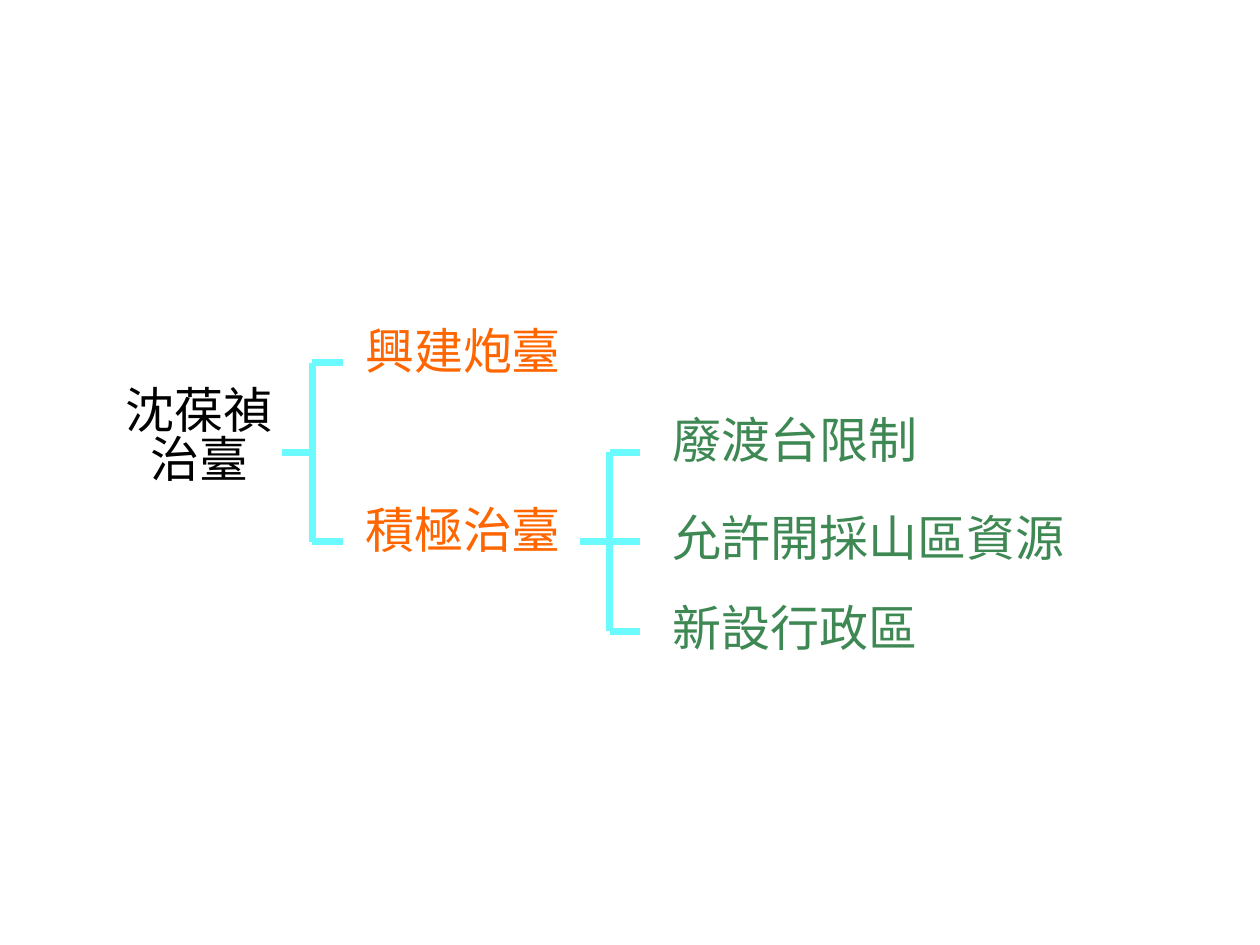
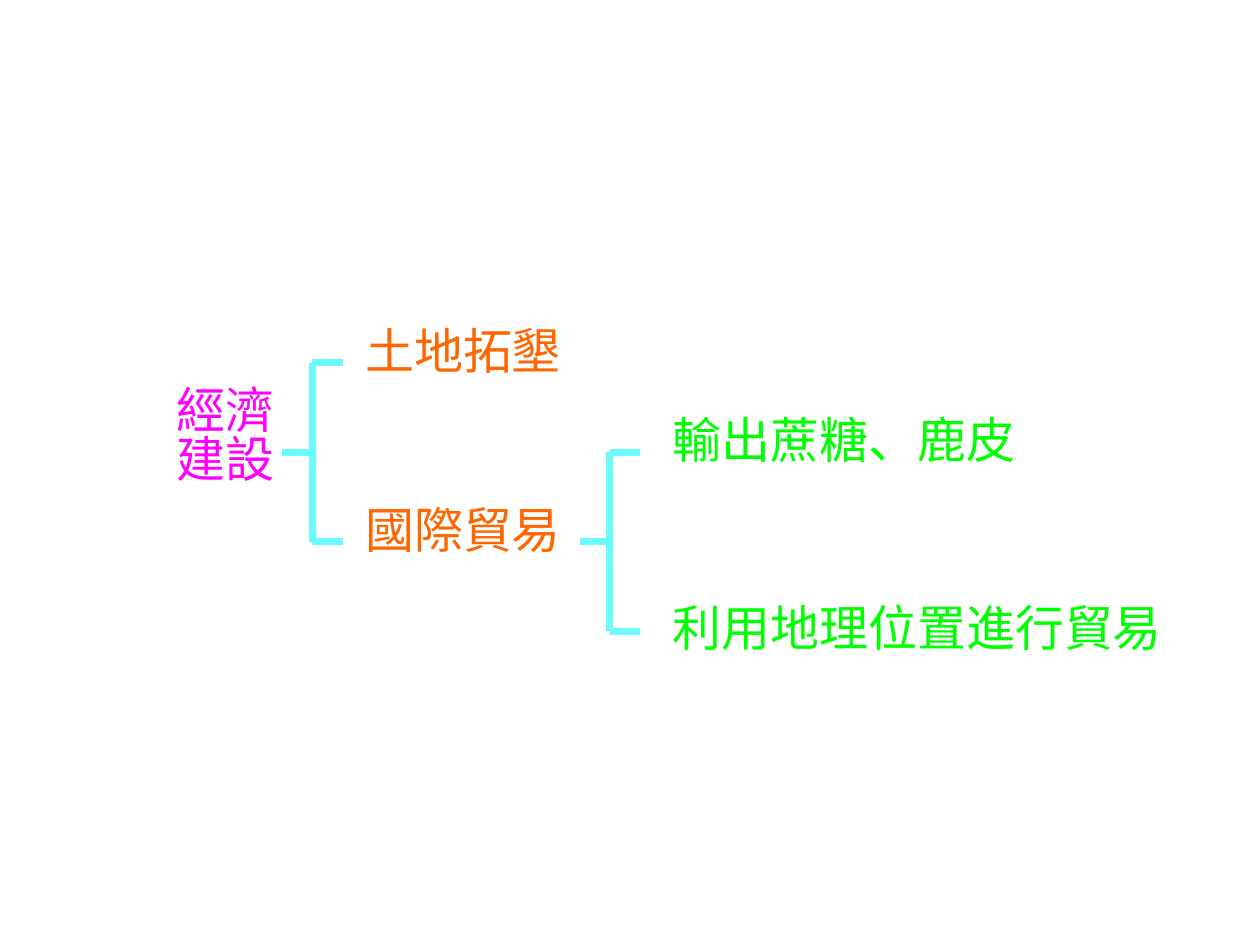
from lxml import etree
from pptx import Presentation
from pptx.dml.color import RGBColor
from pptx.enum.shapes import MSO_CONNECTOR, MSO_SHAPE
from pptx.enum.text import PP_ALIGN
from pptx.oxml.ns import qn
from pptx.util import Inches, Pt

RECTANGLE = MSO_SHAPE.RECTANGLE
STRAIGHT = MSO_CONNECTOR.STRAIGHT
LEFT, CENTER = PP_ALIGN.LEFT, PP_ALIGN.CENTER

COLORS = {
    "paper": "FFFFFF",
    "bracket": "6BFAFD",
    "black": "000000",
    "magenta": "FF00FF",
    "branch": "FF6600",
    "green": "3E8853",
    "lime": "00FF00",
}
FONT = "Noto Sans CJK SC"
FONT_SIZE = 28
LINE_SPACING = 0.83

SLIDE_WIDTH, SLIDE_HEIGHT = 10, 7.5
TOP_ROW = 2.88          # height of the first branch's axis
ROW = 0.71              # distance between neighbouring axes
ARM = 0.24              # length of a bracket's stem or arm
LABEL_HEIGHT = 0.57
LABEL_RISE = 0.31       # from a label's top down to its axis
LEAF_DROP = 0.07        # leaves below the first sit a little lower
ROOT_TOP, ROOT_HEIGHT = 3.04, 1.04
FIRST_BRACKET, SECOND_BRACKET = 2.24, 4.6
BRANCH_LEFT, BRANCH_WIDTH = 2.8, 1.81
LEAF_LEFT, LEAF_WIDTH = 5.24, 4.1


def color(name):
    return RGBColor.from_string(COLORS[name])


def axis(row):
    return TOP_ROW + row * ROW


def add_background(slide):
    shape = slide.shapes.add_shape(
        RECTANGLE, 0, 0, Inches(SLIDE_WIDTH), Inches(SLIDE_HEIGHT))
    shape.shadow.inherit = False
    shape.fill.solid()
    shape.fill.fore_color.rgb = color("paper")
    shape.line.color.rgb = color("paper")
    shape.line.width = Pt(1.25)


def add_label(slide, box, lines, color_name, alignment=LEFT):
    text_box = slide.shapes.add_textbox(*map(Inches, box))
    frame = text_box.text_frame
    frame.word_wrap = True
    for index, line in enumerate(lines):
        paragraph = frame.add_paragraph() if index else frame.paragraphs[0]
        paragraph.alignment = alignment
        paragraph.line_spacing = LINE_SPACING
        run = paragraph.add_run()
        run.text = line
        run.font.size = Pt(FONT_SIZE)
        run.font.name = FONT
        run.font.color.rgb = color(color_name)
        east_asian = etree.SubElement(run.font._element, qn("a:ea"))
        east_asian.set("typeface", FONT)


def add_line(group, start, end):
    points = [Inches(value) for value in (*start, *end)]
    line = group.shapes.add_connector(STRAIGHT, *points)
    line.line.color.rgb = color("bracket")
    line.line.width = Pt(4)
    etree.SubElement(line._element.spPr, qn("a:effectLst"))


def add_bracket(slide, left, top_row, has_middle_arm=False):
    """Draw a bracket two rows tall, its stem on the middle row."""
    group = slide.shapes.add_group_shape()
    spine, right = left + ARM, left + 2 * ARM
    top, middle, bottom = (axis(top_row + step) for step in range(3))
    add_line(group, (left, middle), (right if has_middle_arm else spine, middle))
    add_line(group, (spine, top), (spine, bottom))
    for height in (top, bottom):
        add_line(group, (spine, height), (right, height))


def add_branches(slide, names):
    for index, name in enumerate(names):
        top = axis(2 * index) - LABEL_RISE
        add_label(slide, (BRANCH_LEFT, top, BRANCH_WIDTH, LABEL_HEIGHT),
                  [name], "branch")


def add_leaves(slide, names, color_name):
    """Spread the leaves evenly over rows 1 to 3."""
    step = 2 / (len(names) - 1)
    for index, name in enumerate(names):
        top = axis(1 + index * step) - LABEL_RISE + (LEAF_DROP if index else 0)
        add_label(slide, (LEAF_LEFT, top, LEAF_WIDTH, LABEL_HEIGHT),
                  [name], color_name)


def add_tree_slide(presentation, root, branches, leaves, leaf_color):
    slide = presentation.slides.add_slide(presentation.slide_layouts[6])
    add_background(slide)
    root_box = (root["left"], ROOT_TOP, root["width"], ROOT_HEIGHT)
    add_label(slide, root_box, root["lines"], root["color"], root["alignment"])
    add_bracket(slide, FIRST_BRACKET, 0)
    add_branches(slide, branches)
    add_bracket(slide, SECOND_BRACKET, 1, has_middle_arm=len(leaves) == 3)
    add_leaves(slide, leaves, leaf_color)


def main():
    presentation = Presentation()
    presentation.slide_width = Inches(SLIDE_WIDTH)
    presentation.slide_height = Inches(SLIDE_HEIGHT)
    add_tree_slide(
        presentation,
        {"lines": ["沈葆禎", "治臺"], "left": 0.83, "width": 1.5,
         "color": "black", "alignment": CENTER},
        ["興建炮臺", "積極治臺"],
        ["廢渡台限制", "允許開採山區資源", "新設行政區"],
        "green")
    add_tree_slide(
        presentation,
        {"lines": ["經濟建設"], "left": 1.3, "width": 1.02,
         "color": "magenta", "alignment": LEFT},
        ["土地拓墾", "國際貿易"],
        ["輸出蔗糖、鹿皮", "利用地理位置進行貿易"],
        "lime")
    presentation.save("out.pptx")


if __name__ == "__main__":
    main()
